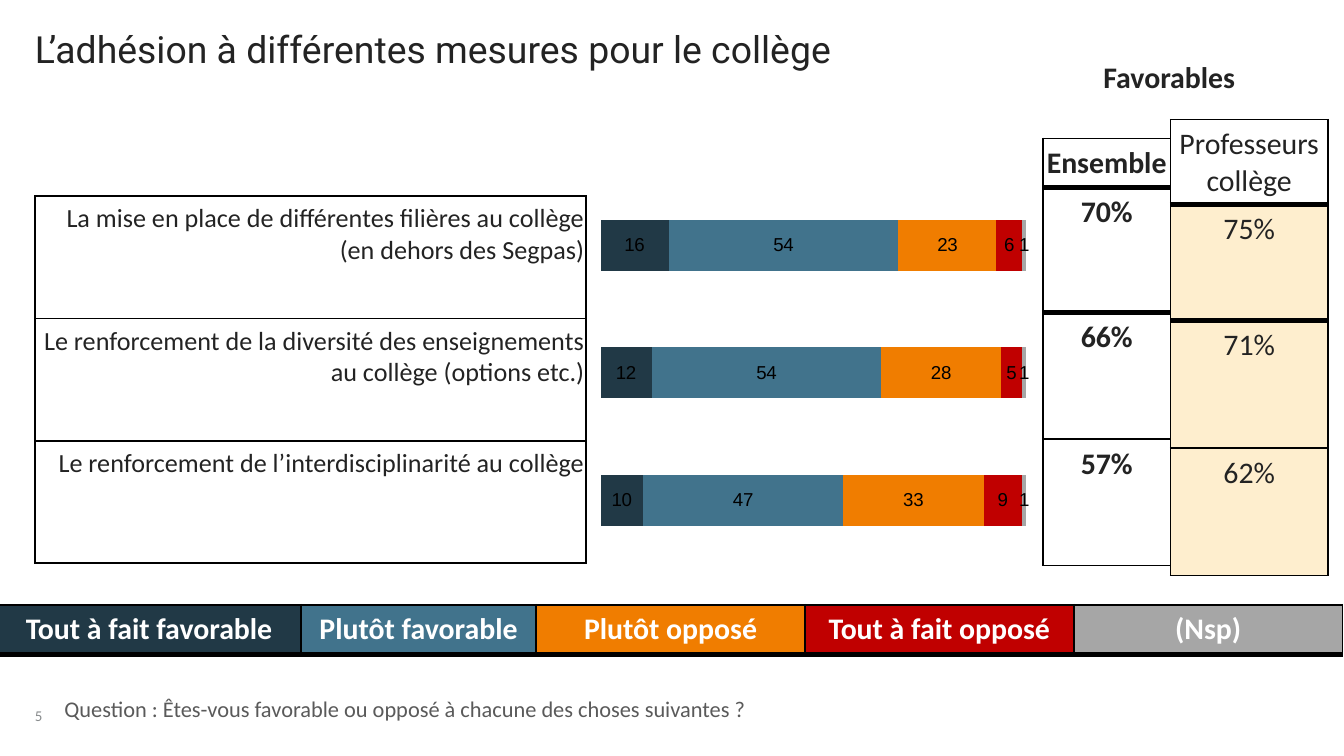
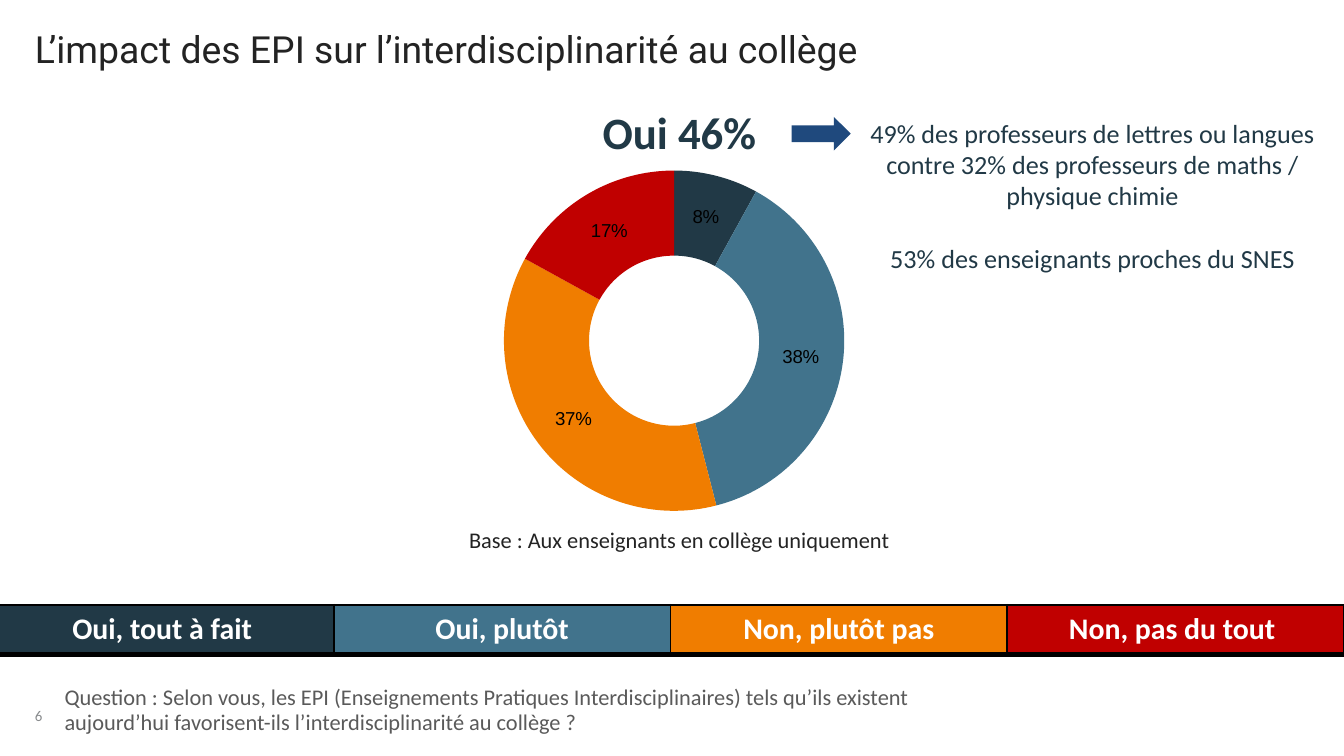
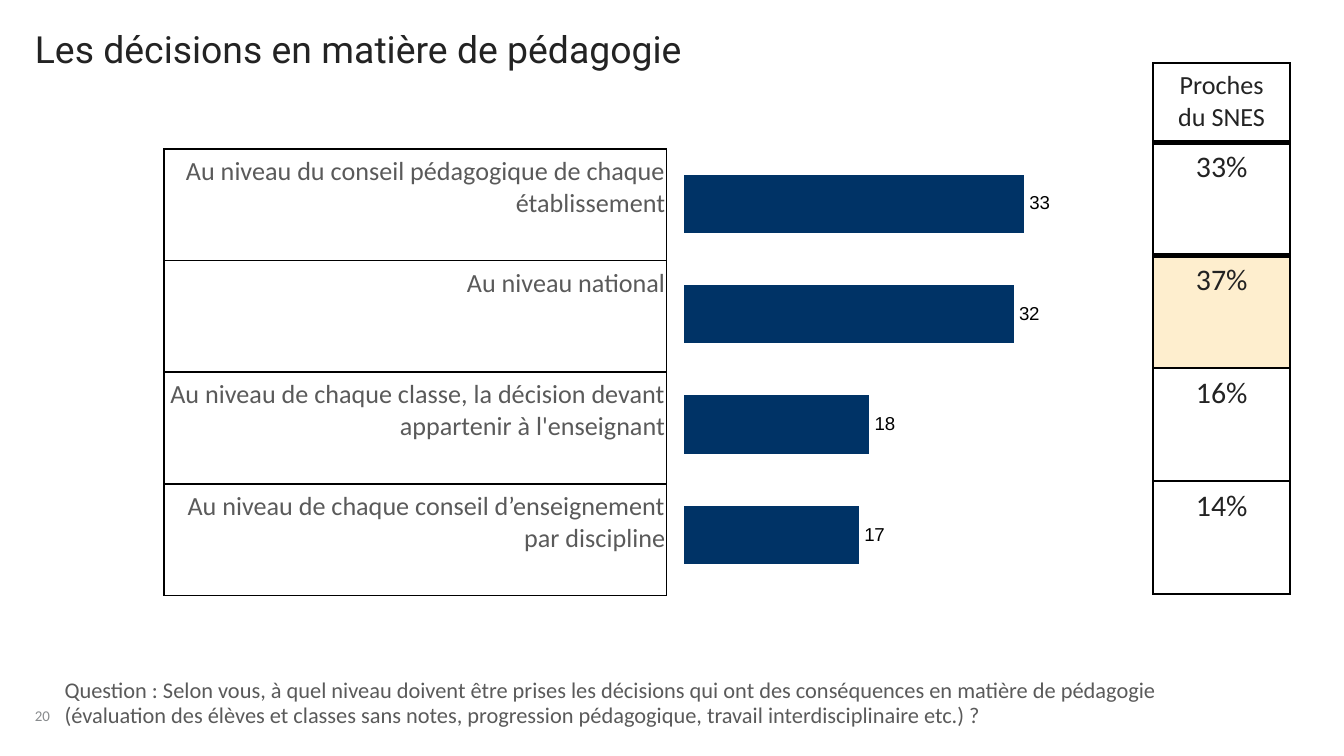
import pptx
import pptx.chart.data
import pptx.dml.color
import pptx.enum.chart
import pptx.enum.shapes
import pptx.enum.text
import pptx.oxml
import pptx.oxml.ns
import pptx.util

Inches = pptx.util.Inches
Pt = pptx.util.Pt
ALIGN = pptx.enum.text.PP_ALIGN
ANCHOR = pptx.enum.text.MSO_ANCHOR
CHART = pptx.enum.chart.XL_CHART_TYPE
LABEL = pptx.enum.chart.XL_LABEL_POSITION
SHAPE = pptx.enum.shapes.MSO_SHAPE

COLORS = {
    "ink": "232323",
    "grey": "5A5A5A",
    "number": "888B8D",
    "white": "FFFFFF",
    "black": "000000",
    "dark": "213946",
    "blue": "41738C",
    "orange": "F07D00",
    "red": "C00000",
    "silver": "A6A6A6",
    "cream": "FEEECE",
    "navy": "003366",
    "arrow": "1F497D",
}
SCALE = ["dark", "blue", "orange", "red", "silver"]
THIN, THICK = 0.96, 3
NARROW, WIDE = 0.01, 0.1


def rgb(name):
    return pptx.dml.color.RGBColor.from_string(COLORS[name])


def style_font(font, size, color, bold=False, name="Calibri"):
    font.name = name
    font.size = Pt(size)
    font.bold = bold
    font.color.rgb = rgb(color)


def add_text(page, place, lines, size, color, bold=False, name="Calibri",
             align=ALIGN.LEFT, anchor=ANCHOR.TOP, spacing=1.0, wrap=True,
             gaps=(), fill=None):
    area = [Inches(length) for length in place]
    if fill:
        box = page.shapes.add_shape(SHAPE.RECTANGLE, *area)
        box.shadow.inherit = False
        box.fill.solid()
        box.fill.fore_color.rgb = rgb(fill)
        box.line.fill.background()
    else:
        box = page.shapes.add_textbox(*area)
    frame = box.text_frame
    frame.margin_left = frame.margin_right = 0
    frame.margin_top = frame.margin_bottom = 0
    frame.word_wrap = wrap
    frame.vertical_anchor = anchor
    frame.text = "\n".join(lines)
    for paragraph in frame.paragraphs:
        paragraph.alignment = align
        paragraph.line_spacing = spacing
        style_font(paragraph.font, size, color, bold, name)
    for index, gap in gaps:
        frame.paragraphs[index].space_before = Pt(gap)


def add_border(cell, side, width):
    cell._tc.get_or_add_tcPr().append(pptx.oxml.parse_xml(
        f'<a:{side} {pptx.oxml.ns.nsdecls("a")} w="{Pt(width)}">'
        f'<a:solidFill><a:srgbClr val="{COLORS["black"]}"/></a:solidFill>'
        f'</a:{side}>'))


def add_grid(page, left, top, widths, heights, rows, size, color,
             align=ALIGN.CENTER, bold=False, thick=(), fills=None, sizes=None,
             margins=None):
    fills, sizes, margins = fills or {}, sizes or {}, margins or {}
    table = page.shapes.add_table(
        len(heights), len(widths), Inches(left), Inches(top),
        Inches(sum(widths)), Inches(sum(heights))).table
    table.first_row = table.horz_banding = False
    for column, width in zip(table.columns, widths):
        column.width = Inches(width)
    for r, (height, texts) in enumerate(zip(heights, rows)):
        table.rows[r].height = Inches(height)
        for c, text in enumerate(texts):
            cell = table.cell(r, c)
            margin = Inches(margins.get(r, NARROW))
            cell.margin_left = cell.margin_right = margin
            cell.text = text
            paragraph = cell.text_frame.paragraphs[0]
            paragraph.alignment = align
            style_font(paragraph.font, sizes.get(r, size), color, bold)
            add_border(cell, "lnL", THIN)
            add_border(cell, "lnR", THIN)
            add_border(cell, "lnT", THICK if r in thick else THIN)
            add_border(cell, "lnB", THICK if r + 1 in thick else THIN)
            if (r, c) in fills:
                cell.fill.solid()
                cell.fill.fore_color.rgb = rgb(fills[r, c])
            else:
                cell.fill.background()


def add_column(page, left, top, width, heights, texts, size, color, **options):
    add_grid(page, left, top, [width], heights, [[text] for text in texts],
             size, color, **options)


def add_scale(page, widths, answers):
    fills = {(0, c): color for c, color in enumerate(SCALE[:len(answers)])}
    add_grid(page, -0.02, 4.5, widths, [0.32], [answers], 16, "white",
             bold=True, thick=(1,), fills=fills, margins={0: WIDE})


def place_plot(chart, layout):
    area = chart._chartSpace.chart.plotArea
    for old in area.findall(pptx.oxml.ns.qn("c:layout")):
        area.remove(old)
    modes = '<c:xMode val="edge"/><c:yMode val="edge"/>'
    lengths = "".join(f'<c:{key} val="{value}"/>'
                      for key, value in zip("xywh", layout))
    area.insert(0, pptx.oxml.parse_xml(
        f'<c:layout {pptx.oxml.ns.nsdecls("c")}><c:manualLayout>'
        f'<c:layoutTarget val="inner"/>{modes}{lengths}'
        f'</c:manualLayout></c:layout>'))


def add_chart(page, kind, place, layout, series_values):
    data = pptx.chart.data.CategoryChartData()
    data.categories = [str(i + 1) for i in range(len(series_values[0]))]
    for number, values in enumerate(series_values, 1):
        data.add_series(f"Series {number}", values)
    area = [Inches(length) for length in place]
    chart = page.shapes.add_chart(kind, *area, data).chart
    chart.has_legend = chart.has_title = False
    style_font(chart.font, 10, "black", name="Arial")
    place_plot(chart, layout)
    return chart


def add_bars(page, kind, place, layout, series_values, colors, top_value, gap,
             position):
    chart = add_chart(page, kind, place, layout, series_values)
    chart.category_axis.reverse_order = True
    chart.category_axis.visible = False
    chart.value_axis.visible = False
    chart.value_axis.has_major_gridlines = False
    chart.value_axis.minimum_scale = 0
    chart.value_axis.maximum_scale = top_value
    plot = chart.plots[0]
    plot.vary_by_categories = False
    plot.gap_width = gap
    for series, color in zip(plot.series, colors):
        series.format.fill.solid()
        series.format.fill.fore_color.rgb = rgb(color)
        series.data_labels.show_value = True
        series.data_labels.position = position


def add_doughnut(page, place, layout, values):
    chart = add_chart(page, CHART.DOUGHNUT, place, layout, [values])
    chart.plots[0].vary_by_categories = True
    series = chart.plots[0].series[0]
    for index, color in enumerate(SCALE[:len(values)]):
        fill = series.points[index].format.fill
        fill.solid()
        fill.fore_color.rgb = rgb(color)
    labels = series.data_labels
    labels.show_value = False
    labels.show_percentage = True
    labels.number_format = "0%"
    labels.number_format_is_linked = False


def add_arrow(page, place):
    arrow = page.shapes.add_shape(
        SHAPE.RIGHT_ARROW, *[Inches(length) for length in place])
    arrow.shadow.inherit = False
    arrow.fill.solid()
    arrow.fill.fore_color.rgb = rgb("arrow")
    arrow.line.fill.background()


def add_page(deck, number, title, question, question_place, fill=None):
    page = deck.slides.add_slide(deck.slide_layouts[6])
    add_text(page, (0.26, 5.13, 0.34, 0.26), [number], 8, "number",
             anchor=ANCHOR.BOTTOM, spacing=0.85, wrap=False)
    add_text(page, (0.26, 0.23, 9.46, 0.3), [title], 20, "ink",
             name="Roboto", spacing=0.9)
    add_text(page, question_place, [question], 12, "grey",
             anchor=ANCHOR.MIDDLE, spacing=0.95, fill=fill)
    return page


def build_measures(deck):
    page = add_page(
        deck, "5", "L’adhésion à différentes mesures pour le collège",
        "Question : Êtes-vous favorable ou opposé à chacune des choses "
        "suivantes ?", (0.48, 5.11, 7.16, 0.35))
    add_column(page, 7.76, 1.03, 0.95, [0.34, 0.93, 0.94, 0.94],
               ["Ensemble", "70%", "66%", "57%"], 16, "ink",
               bold=True, thick=(1, 2))
    add_scale(page, [2.26, 1.75, 2, 2, 2],
              ["Tout à fait favorable", "Plutôt favorable", "Plutôt opposé",
               "Tout à fait opposé", "(Nsp)"])
    add_bars(page, CHART.BAR_STACKED, (2.64, 0.8, 5.49, 3.59),
             (0.333, 0.154, 0.577, 0.792),
             [(16, 12, 10), (54, 54, 47), (23, 28, 33), (6, 5, 9), (1, 1, 1)],
             SCALE, 100, 150, LABEL.CENTER)
    add_column(page, 0.26, 1.46, 4.1, [0.91] * 3,
               ["La mise en place de différentes filières au collège "
                "(en dehors des Segpas)",
                "Le renforcement de la diversité des enseignements "
                "au collège (options etc.)",
                "Le renforcement de l’interdisciplinarité au collège"],
               14, "ink", align=ALIGN.RIGHT)
    add_column(page, 8.71, 0.89, 1.17, [0.55, 0.86, 0.95, 0.95],
               ["Professeurs collège", "75%", "71%", "62%"], 16, "ink",
               thick=(1, 2), fills={(r, 0): "cream" for r in (1, 2, 3)})
    add_text(page, (7.76, 0.44, 1.88, 0.27), ["Favorables"], 16, "ink",
             bold=True, align=ALIGN.CENTER)


def build_impact(deck):
    page = add_page(
        deck, "6", "L’impact des EPI sur l’interdisciplinarité au collège",
        "Question : Selon vous, les EPI (Enseignements Pratiques "
        "Interdisciplinaires) tels qu’ils existent aujourd’hui "
        "favorisent-ils l’interdisciplinarité au collège ?",
        (0.48, 5.11, 6.89, 0.35))
    add_scale(page, [10.02 / 4] * 4, ["Oui, tout à fait ", "Oui, plutôt",
                                      "Non, plutôt pas", "Non, pas du tout "])
    add_doughnut(page, (2.95, 1.11, 3.92, 3.49),
                 (0.204, 0.045, 0.646, 0.727), (8, 38, 37, 17))
    add_text(page, (3.49, 3.9, 3.14, 0.21),
             ["Base : Aux enseignants en collège uniquement"], 12, "ink",
             spacing=1.07, wrap=False)
    add_text(page, (3.88, 0.78, 2.35, 0.4), ["Oui 46%"], 24, "dark",
             bold=True, align=ALIGN.CENTER)
    add_arrow(page, (5.89, 0.87, 0.44, 0.25))
    add_text(page, (6.38, 0.87, 3.5, 1.17),
             ["49% des professeurs de lettres ou langues",
              "contre 32% des professeurs de maths / physique chimie",
              "53% des enseignants proches du SNES"],
             14, "dark", align=ALIGN.CENTER, gaps=[(2, 17)])


def build_decisions(deck):
    page = add_page(
        deck, "20", "Les décisions en matière de pédagogie",
        "Question : Selon vous, à quel niveau doivent être prises les "
        "décisions qui ont des conséquences en matière de pédagogie "
        "(évaluation des élèves et classes sans notes, progression "
        "pédagogique, travail interdisciplinaire etc.) ?",
        (0.48, 5, 8.75, 0.47), fill="white")
    add_bars(page, CHART.BAR_CLUSTERED, (3.64, 0.82, 5.74, 3.9),
             (0.252, 0.073, 0.669, 0.843), [(33, 32, 18, 17)],
             ["navy"], 50, 90, LABEL.OUTSIDE_END)
    add_column(page, 1.22, 1.11, 3.74, [0.83] * 4,
               ["Au niveau du conseil pédagogique de chaque établissement",
                "Au niveau national",
                "Au niveau de chaque classe, la décision devant "
                "appartenir à l'enseignant",
                "Au niveau de chaque conseil d’enseignement par discipline"],
               14, "grey", align=ALIGN.RIGHT)
    add_column(page, 8.58, 0.47, 1.02, [0.59] + [0.84] * 4,
               ["Proches du SNES", "33%", "37%", "16%", "14%"], 16, "ink",
               thick=(1, 2), fills={(2, 0): "cream"}, sizes={0: 14},
               margins={0: WIDE})


def main():
    deck = pptx.Presentation()
    deck.slide_width = Inches(10)
    deck.slide_height = deck.slide_width * 9 // 16
    build_measures(deck)
    build_impact(deck)
    build_decisions(deck)
    deck.save("out.pptx")


if __name__ == "__main__":
    main()
